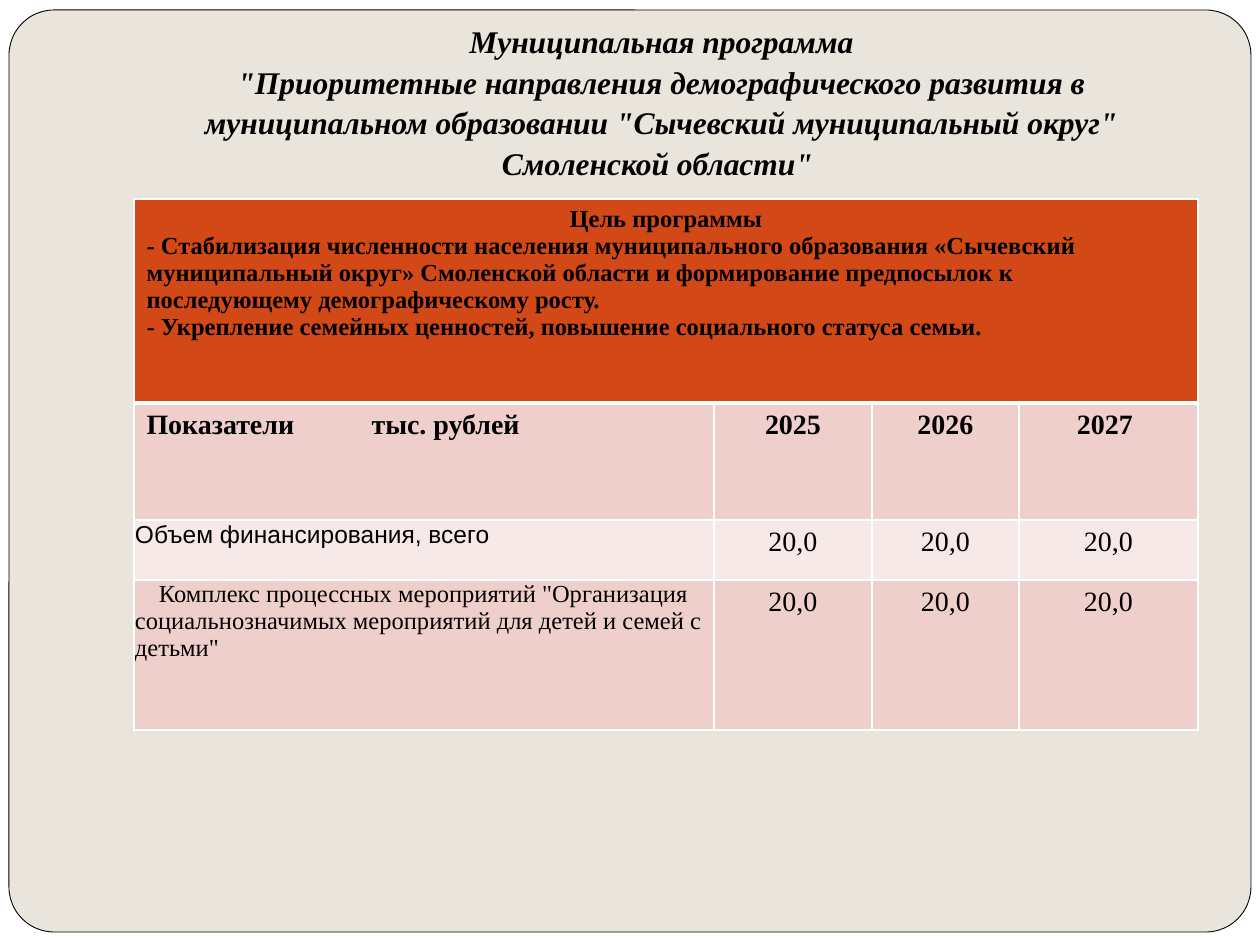
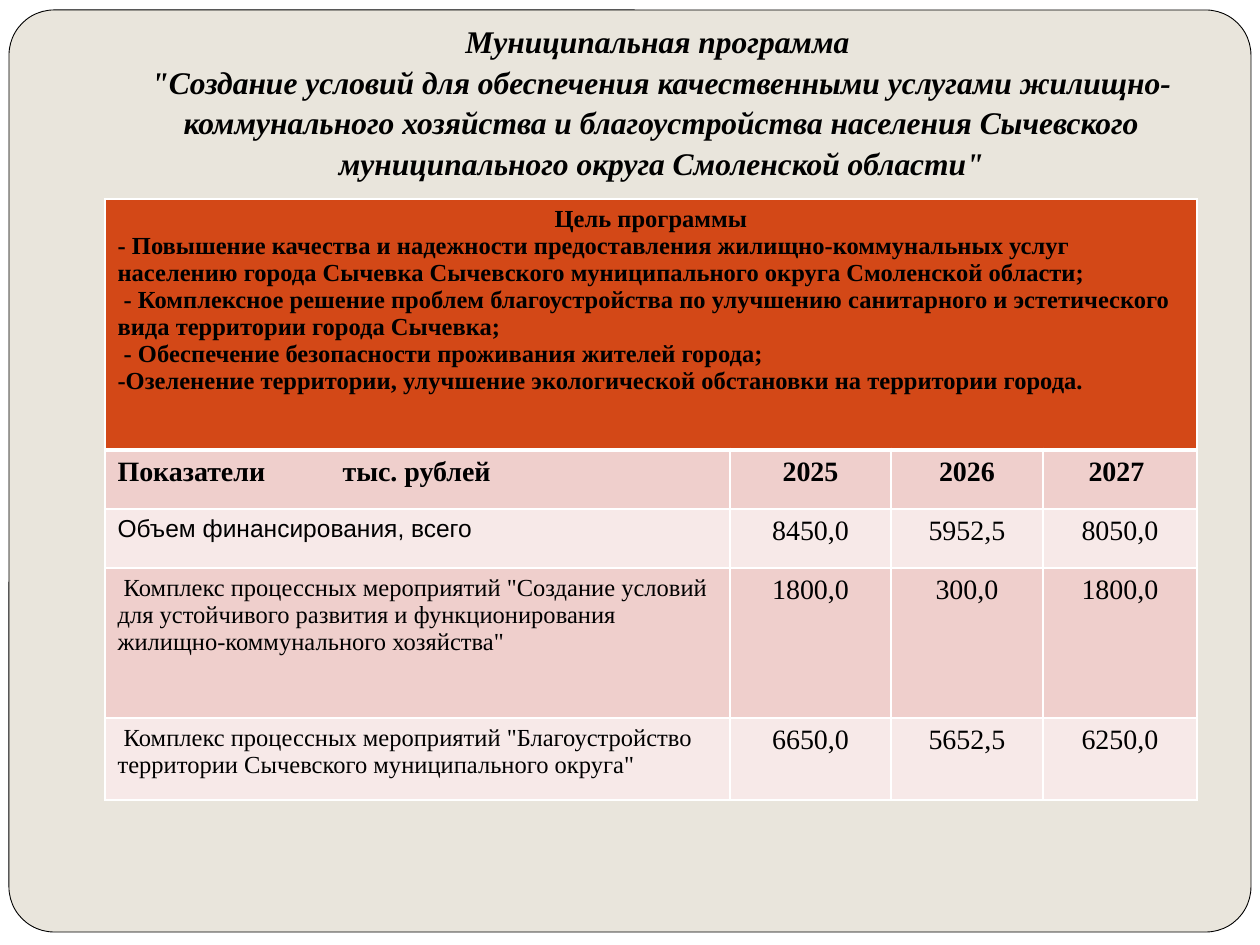
from lxml.etree import SubElement
from pptx import Presentation
from pptx.dml.color import RGBColor
from pptx.enum.shapes import MSO_SHAPE as Shape
from pptx.enum.text import MSO_ANCHOR as Anchor, PP_ALIGN as Align
from pptx.oxml.ns import qn
from pptx.util import Pt

PX = 7257.6
COLORS = {
    "white": "FFFFFF",
    "black": "000000",
    "panel": "E9E5DC",
    "goal": "D34817",
    "dark_band": "EFCFCC",
    "light_band": "F7E9E8",
}
SERIF, SANS = "Times New Roman", "Arial"
TABLE_TOP = 199
TAB_STOP = 225
YEARS = ["Показатели\tтыс. рублей", "2025", "2026", "2027 "]
TOTAL = "Объем финансирования, всего"

DEMOGRAPHY = {
    "title": " Муниципальная программа \v\"Приоритетные направления демографического развития в "
             "муниципальном образовании \"Сычевский муниципальный округ\" Смоленской области\" ",
    "left": 134,
    "columns": [580, 158, 147, 179],
    "heights": [204, 117, 60, 150],
    "tight_labels": True,
    "goals": [
        "- Стабилизация численности населения муниципального образования «Сычевский "
        "муниципальный округ» Смоленской области и формирование предпосылок к "
        "последующему демографическому росту.",
        "- Укрепление семейных ценностей, повышение социального статуса семьи. ",
    ],
    "funding": [
        [TOTAL, "20,0", "20,0", "20,0"],
        ["Комплекс процессных мероприятий \"Организация социальнозначимых мероприятий "
         "для детей и семей с детьми\"", "20,0", "20,0", "20,0"],
    ],
}
UTILITIES = {
    "title": "Муниципальная программа \v\"Создание условий для обеспечения качественными услугами "
             "жилищно-коммунального хозяйства и благоустройства населения Сычевского "
             "муниципального округа Смоленской области\"",
    "left": 105,
    "columns": [625, 161, 152, 154],
    "heights": [251, 59, 59, 150, 82],
    "tight_labels": False,
    "goals": [
        "- Повышение качества и надежности предоставления жилищно-коммунальных услуг "
        "населению города Сычевка Сычевского муниципального округа Смоленской области;",
        " - Комплексное решение проблем благоустройства по улучшению санитарного и "
        "эстетического вида территории города Сычевка;",
        " - Обеспечение безопасности проживания жителей города;",
        "-Озеленение территории, улучшение экологической обстановки на территории города.",
    ],
    "funding": [
        [TOTAL, "8450,0", "5952,5", "8050,0"],
        [" Комплекс процессных мероприятий \"Создание условий для устойчивого развития и "
         "функционирования жилищно-коммунального хозяйства\"", "1800,0", "300,0", "1800,0"],
        [" Комплекс процессных мероприятий \"Благоустройство территории Сычевского "
         "муниципального округа\"", "6650,0", "5652,5", "6250,0"],
    ],
}


def px(length):
    """Turn pixels into EMU."""
    return round(length * PX)


def rgb(name):
    """Look up a palette colour."""
    return RGBColor.from_string(COLORS[name])


def style(paragraph, size, align=Align.LEFT, bold=False, italic=False, face=SERIF):
    """Set alignment and font of one paragraph."""
    paragraph.alignment = align
    font = paragraph.font
    font.name, font.size, font.bold, font.italic = face, Pt(size), bold, italic
    font.color.rgb = rgb("black")


def add_panel(slide):
    """Draw the white page and its rounded panel."""
    page = slide.background.fill
    page.solid()
    page.fore_color.rgb = rgb("white")
    panel = slide.shapes.add_shape(Shape.ROUNDED_RECTANGLE, px(9), px(10), px(1242), px(922))
    panel.adjustments[0] = 0.049
    panel.shadow.inherit = False
    panel.fill.solid()
    panel.fill.fore_color.rgb = rgb("panel")
    panel.line.color.rgb = rgb("black")
    panel.line.width = Pt(0.5)


def add_title(slide, text):
    """Write the programme title."""
    frame = slide.shapes.add_textbox(px(126), px(38), px(1071), px(157)).text_frame
    frame.word_wrap = True
    frame.vertical_anchor = Anchor.BOTTOM
    frame.margin_left = frame.margin_right = frame.margin_bottom = px(13)
    frame.margin_top = px(6)
    title = frame.paragraphs[0]
    title.text = text
    title.line_spacing = 1.08
    style(title, 18, Align.CENTER, bold=True, italic=True)


def paint_cell(cell, color, top=1, bottom=1):
    """Give a cell white borders, in points, and a fill."""
    properties = cell._tc.get_or_add_tcPr()
    for side, width in (("lnL", 1), ("lnR", 1), ("lnT", top), ("lnB", bottom)):
        border = SubElement(properties, qn(f"a:{side}"), w=str(Pt(width)))
        fill = SubElement(border, qn("a:solidFill"))
        SubElement(fill, qn("a:srgbClr"), val=COLORS["white"])
    cell.fill.solid()
    cell.fill.fore_color.rgb = rgb(color)


def fill_goals(table, goals):
    """Write the programme goals across the top row."""
    for cell in table.rows[0].cells:
        paint_cell(cell, "goal", bottom=3)
    goal_cell = table.cell(0, 0)
    goal_cell.merge(table.cell(0, len(table.columns) - 1))
    frame = goal_cell.text_frame
    frame.text = "\n".join(["Цель программы", *goals])
    for index, paragraph in enumerate(frame.paragraphs):
        style(paragraph, 14, Align.LEFT if index else Align.CENTER, bold=True)


def fill_years(table):
    """Write the row of column headings."""
    for cell, heading in zip(table.rows[1].cells, YEARS):
        paint_cell(cell, "dark_band", top=3)
        paragraph = cell.text_frame.paragraphs[0]
        paragraph.text = heading
        if "\t" in heading:
            stops = SubElement(paragraph._p.get_or_add_pPr(), qn("a:tabLst"))
            SubElement(stops, qn("a:tab"), pos=str(px(TAB_STOP)), algn="l")
        style(paragraph, 16, Align.LEFT if "\t" in heading else Align.CENTER, bold=True)


def tighten(cell, indent):
    """Remove the cell margins and indent the first line."""
    cell.margin_left = cell.margin_right = cell.margin_top = px(1)
    cell.margin_bottom = 0
    cell.text_frame.paragraphs[0]._p.get_or_add_pPr().set("indent", str(px(indent)))


def fill_funding(table, funding, tight_labels):
    """Write the funding rows in alternating bands."""
    for index, amounts in enumerate(funding):
        cells = table.rows[index + 2].cells
        for column, (cell, text) in enumerate(zip(cells, amounts)):
            paint_cell(cell, "dark_band" if index % 2 else "light_band")
            paragraph = cell.text_frame.paragraphs[0]
            paragraph.text = text
            if column:
                style(paragraph, 16, Align.CENTER)
            else:
                style(paragraph, 14, face=SERIF if index else SANS)
        if tight_labels:
            tighten(table.cell(index + 2, 0), 24 if index else 0)


def add_programme_table(slide, programme):
    """Build the table of goals and funding."""
    columns, heights = programme["columns"], programme["heights"]
    table = slide.shapes.add_table(
        len(heights), len(columns), px(programme["left"]), px(TABLE_TOP),
        px(sum(columns)), px(sum(heights))).table
    table.first_row = table.horz_banding = False
    for column, width in zip(table.columns, columns):
        column.width = px(width)
    for row, height in zip(table.rows, heights):
        row.height = px(height)
    fill_goals(table, programme["goals"])
    fill_years(table)
    fill_funding(table, programme["funding"], programme["tight_labels"])


def main():
    """Build and save the presentation."""
    deck = Presentation()
    deck.slide_width, deck.slide_height = px(1260), px(945)
    for programme in (DEMOGRAPHY, UTILITIES):
        slide = deck.slides.add_slide(deck.slide_layouts[6])
        add_panel(slide)
        add_title(slide, programme["title"])
        add_programme_table(slide, programme)
    deck.save("out.pptx")


if __name__ == "__main__":
    main()
